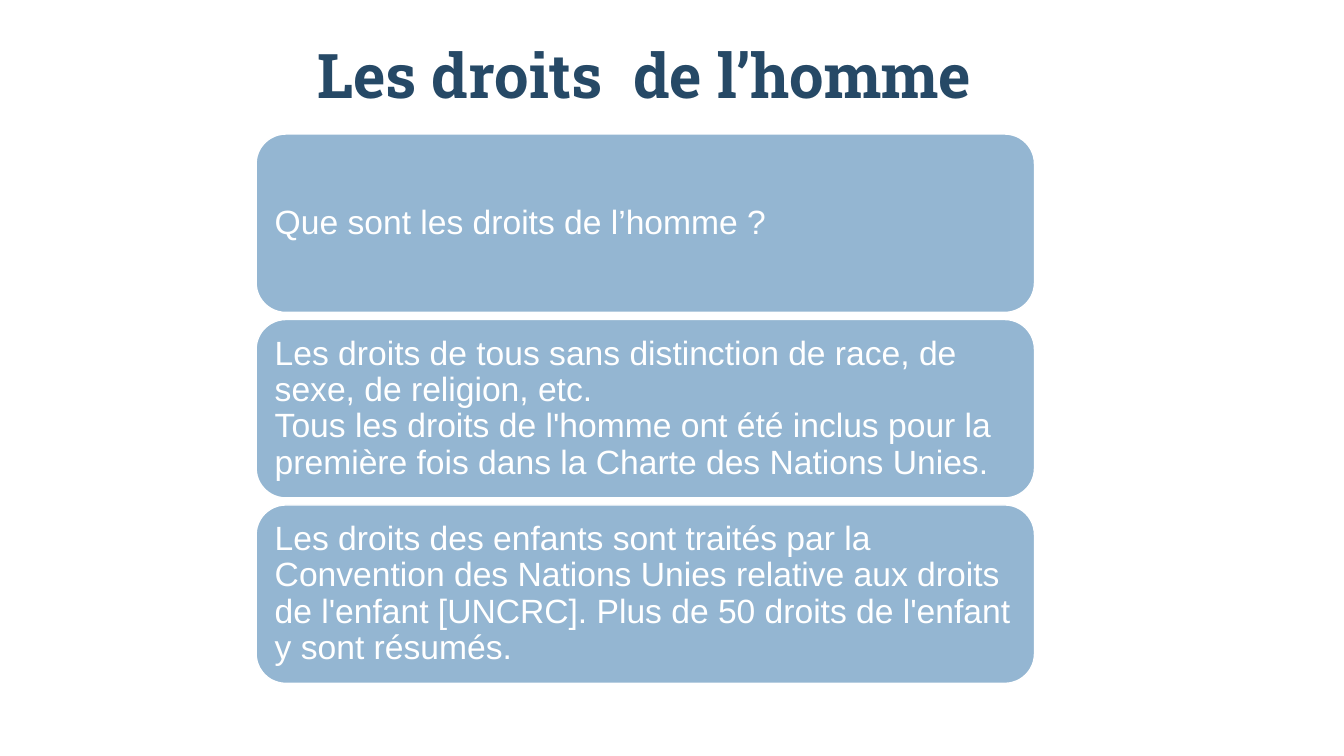
from pptx import Presentation
from pptx import util as u
from pptx.dml.color import RGBColor
from pptx.enum import shapes, text

NAVY, LIGHT_BLUE, WHITE = "264966", "94B6D2", "FFFFFF"

CARD_LEFT, CARD_TOP = 2.54, 1.33
CARD_WIDTH, CARD_HEIGHT = 7.72, 1.77
CARD_STEP = 1.84

STATEMENTS = [
    "Que sont les droits de l’homme ?",
    "Les droits de tous sans distinction de race, de sexe, de religion, etc.\n"
    "Tous les droits de l'homme ont été inclus pour la première fois "
    "dans la Charte des Nations Unies.",
    "Les droits des enfants sont traités par la Convention des Nations Unies "
    "relative aux droits de l'enfant [UNCRC]. Plus de 50 droits de l'enfant "
    "y sont résumés.",
]


def color(hex_code):
    return RGBColor.from_string(hex_code)


def write(frame, wording, font_name, size, hex_code, align, bold=False):
    """Fill a frame with one vertically centred paragraph."""
    frame.word_wrap = True
    frame.vertical_anchor = text.MSO_ANCHOR.MIDDLE
    paragraph = frame.paragraphs[0]
    paragraph.text = wording
    paragraph.alignment = align
    paragraph.line_spacing = 0.9
    paragraph.font.size = u.Pt(size)
    for run in paragraph.runs:
        run.font.name = font_name
        run.font.size = u.Pt(size)
        run.font.bold = bold
        run.font.color.rgb = color(hex_code)


def add_title(slide, wording):
    title = slide.shapes.add_textbox(
        u.Inches(2.11), u.Inches(-0.54), u.Inches(8.57), u.Inches(2.63))
    write(title.text_frame, wording, "Roboto Slab", 44, NAVY,
          text.PP_ALIGN.CENTER, bold=True)


def add_card(slide, top, statement):
    card = slide.shapes.add_shape(
        shapes.MSO_SHAPE.ROUNDED_RECTANGLE, u.Inches(CARD_LEFT), u.Inches(top),
        u.Inches(CARD_WIDTH), u.Inches(CARD_HEIGHT))
    card.shadow.inherit = False
    card.fill.solid()
    card.fill.fore_color.rgb = color(LIGHT_BLUE)
    card.line.color.rgb = color(WHITE)
    card.line.width = u.Pt(1)
    frame = card.text_frame
    frame.margin_left = frame.margin_right = u.Inches(0.1)
    frame.margin_top = frame.margin_bottom = u.Inches(0.1)
    write(frame, statement, "Arial", 24, WHITE, text.PP_ALIGN.LEFT)


def main():
    deck = Presentation()
    deck.slide_width, deck.slide_height = u.Inches(13.33), u.Inches(7.5)
    slide = deck.slides.add_slide(deck.slide_layouts[6])

    # Heading
    add_title(slide, "Les droits  de l’homme")

    # Stack of statements
    for row, statement in enumerate(STATEMENTS):
        add_card(slide, CARD_TOP + row * CARD_STEP, statement)

    deck.save("out.pptx")


if __name__ == "__main__":
    main()
